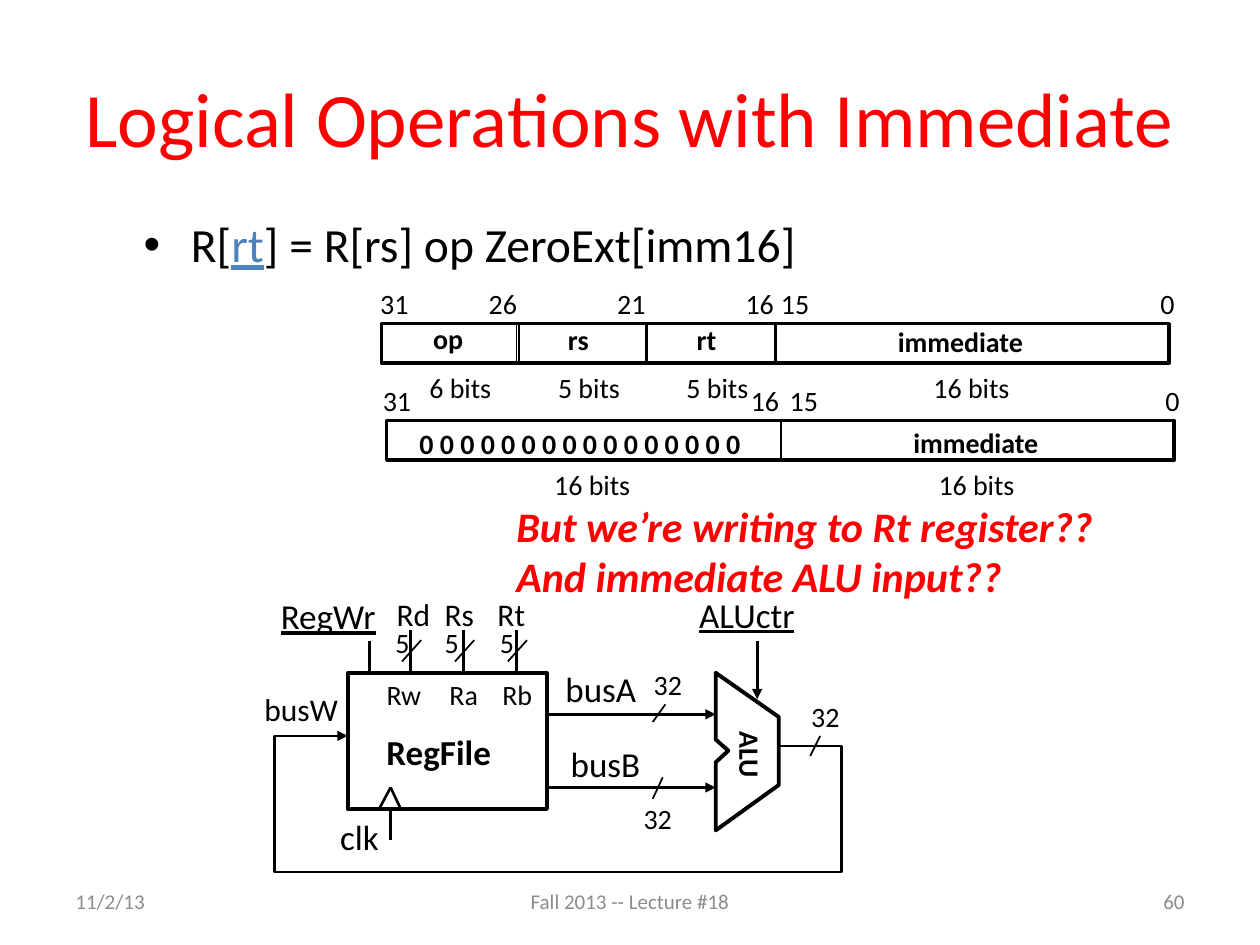
from pptx import Presentation
from pptx.dml.color import RGBColor
from pptx.enum.shapes import MSO_CONNECTOR, MSO_SHAPE
from pptx.enum.text import MSO_ANCHOR, PP_ALIGN
from pptx.oxml.ns import qn
from pptx.util import Pt
from lxml.etree import SubElement

THEME = {
    "font": "Calibri", "ink": "000000", "alert": "FF0000", "accent": "4F81BD", "muted": "8C8C8C",
    "title": 44, "body": 27.2, "callout": 24, "signal": 20, "port": 18, "label": 16, "footer": 12,
    "thin": 1, "wire": 1.5, "frame": 2, "block": 2.25,
}
LINE_HEIGHT = {THEME["label"]: 26.6, THEME["port"]: 29, THEME["signal"]: 31}

TITLE = "Logical Operations with Immediate"
RULE = [("R[", {}), ("rt", {"color": THEME["accent"], "underline": True}),
        ("] = R[rs] op ZeroExt[imm16]", {})]
CALLOUT = ["But we’re writing to Rt register??", "And immediate ALU input??"]
FOOTERS = [  # text, left, width, alignment
    ("11/2/13", 36, 168, PP_ALIGN.LEFT),
    ("Fall 2013 -- Lecture #18", 246, 228, PP_ALIGN.CENTER),
    ("60", 516, 168, PP_ALIGN.RIGHT),
]

# Instruction words: cells are (left, width); labels are (text, left, width)
WORDS = [
    {"left": 218, "top": 185,
     "cells": [(217.4, 77.8), (296.6, 72.7), (370, 72.7), (443.5, 224.6)],
     "names": [("op", 240.5, 31.7, 180.3), ("rs", 317.5, 26.6, 181), ("rt", 391, 26.6, 181),
               ("immediate", 506, 87, 182.2)],
     "positions": [("31", 210.2, 31), ("26", 272.2, 31), ("21", 345.6, 31), ("16", 419, 31),
                   ("15", 439.2, 31), ("0", 656, 22.3)],
     "sizes": [("6 bits", 238.3, 50.4), ("5 bits", 311.8, 50.4), ("5 bits", 385.2, 50.4),
               ("16 bits", 526.3, 58.3)]},
    {"left": 221, "top": 240.3,
     "cells": [(446.4, 225)],
     "names": [("0 0 0 0 0 0 0 0 0 0 0 0 0 0 0 0", 232.6, 202.3, 240.5),
               ("immediate", 514.8, 87, 239.8)],
     "positions": [("31", 211.7, 31), ("16", 422, 31), ("15", 444.2, 31), ("0", 658.8, 22.3)],
     "sizes": [("16 bits", 309.6, 58.3), ("16 bits", 529.2, 58.3)]},
]
WORD_WIDTH, WORD_HEIGHT = 450, 22.6

SIGNALS = [  # text, left, top, width, size, format
    ("RegWr", 153.4, 336.2, 69, "signal", {"underline": True}),
    ("ALUctr", 392.4, 335.5, 82, "signal", {"underline": True}),
    ("busA", 316, 378, 56.2, "signal", {}),
    ("busB", 319, 420.5, 55.4, "signal", {}),
    ("clk", 187.2, 462.2, 36.7, "signal", {}),
    ("RegFile", 213.8, 414, 75, "signal", {"bold": True}),
    ("busW", 144, 391, 57, "port", {}),
    ("Rd", 219.6, 336.2, 33.8, "port", {}),
    ("Rs", 247, 336.2, 31.7, "port", {}),
    ("Rt", 277.2, 336.2, 31, "port", {}),
    ("Rw", 213.8, 383.8, 34.6, "label", {}),
    ("Ra", 249.8, 383.8, 31.7, "label", {}),
    ("Rb", 280, 383.8, 33, "label", {}),
    ("5", 218.9, 354.2, 22.3, "label", {}),
    ("5", 247, 354.2, 22.3, "label", {}),
    ("5", 278.6, 354.2, 22.3, "label", {}),
    ("32", 366.5, 378, 31, "label", {}),
    ("32", 360.7, 454.3, 31, "label", {}),
    ("32", 456.5, 396, 31, "label", {}),
    ("ALU", 407.5, 419, 42.5, "label", {"bold": True, "rotation": 90}),
]
REGFILE = (198.7, 384.5, 113.8, 77.8)
ALU = [(409, 384.5), (409, 422.6), (416.2, 429), (409, 435.6), (409, 474.5),
       (445, 448.6), (445, 409.7)]
FEEDBACK = [(445, 426.2), (481, 426.2), (481, 498.2), (157, 498.2), (157, 420.5), (198.7, 420.5)]
PORT_XS = [234.7, 265, 295.2]
ARROWS = [(313, 408.2, 409, 408.2), (313, 450, 409, 450), (432.7, 366.5, 432.7, 399.6)]
WIRES = [(211, 366.5, 211, 384.5), (223.2, 450, 216.7, 462.2), (223.2, 450, 229, 462.2),
         (223.2, 462.2, 223.2, 480.2)] + [(x, 360, x, 384.5) for x in PORT_XS]
SLASHES = [(380.2, 402.5, 373, 412.6), (373, 456.5, 378.7, 444.2), (468.7, 420.5, 463, 432)]
SLASHES += [(x - 5, 378, x + 6, 365.8) for x in PORT_XS]

deck = Presentation()
deck.slide_width, deck.slide_height = Pt(720), Pt(540)
slide = deck.slides.add_slide(deck.slide_layouts[6])
shapes = slide.shapes


def add_text(paragraphs, left, top, width, height, *, size="label", color=THEME["ink"],
             bold=False, italic=False, underline=False, align=PP_ALIGN.LEFT,
             anchor=MSO_ANCHOR.TOP, wrap=False, rotation=0):
    """Add a text box; each paragraph is a string or a list of (text, overrides) runs."""
    box = shapes.add_textbox(Pt(left), Pt(top), Pt(width), Pt(height))
    box.rotation = rotation
    frame = box.text_frame
    frame.word_wrap, frame.vertical_anchor = wrap, anchor
    for index, content in enumerate(paragraphs):
        paragraph = frame.paragraphs[0] if index == 0 else frame.add_paragraph()
        paragraph.alignment = align
        for text, overrides in [(content, {})] if isinstance(content, str) else content:
            run = paragraph.add_run()
            run.text = text
            font = run.font
            font.name, font.size = THEME["font"], Pt(THEME[size])
            font.bold, font.italic = bold, italic
            font.underline = overrides.get("underline", underline)
            font.color.rgb = RGBColor.from_string(overrides.get("color", color))
    return box


def add_label(text, left, top, width, size="label", **text_format):
    add_text([text], left, top, width, LINE_HEIGHT[THEME[size]], size=size, **text_format)


def set_line(shape, weight, arrow=False):
    shape.line.color.rgb = RGBColor.from_string(THEME["ink"])
    shape.line.width = Pt(THEME[weight])
    if arrow:
        SubElement(shape.line._get_or_add_ln(), qn("a:tailEnd"), type="triangle")


def outline(shape, weight, arrow=False):
    shape.shadow.inherit = False
    shape.fill.background()
    set_line(shape, weight, arrow)


def add_box(left, top, width, height, weight):
    box = shapes.add_shape(MSO_SHAPE.RECTANGLE, Pt(left), Pt(top), Pt(width), Pt(height))
    outline(box, weight)


def add_path(points, weight, close=False, arrow=False):
    corners = [(Pt(x), Pt(y)) for x, y in points]
    builder = shapes.build_freeform(*corners[0])
    builder.add_line_segments(corners[1:], close=close)
    outline(builder.convert_to_shape(), weight, arrow)


def add_line(ends, weight, arrow=False):
    line = shapes.add_connector(MSO_CONNECTOR.STRAIGHT, *map(Pt, ends))
    set_line(line, weight, arrow)
    SubElement(line._element.spPr, qn("a:effectLst"))


def add_word(word):
    """Draw an instruction word with bit positions above and field sizes below."""
    top = word["top"]
    add_box(word["left"], top, WORD_WIDTH, WORD_HEIGHT, "frame")
    for left, width in word["cells"]:
        add_box(left, top, width, WORD_HEIGHT, "thin")
    for text, left, width, name_top in word["names"]:
        add_label(text, left, name_top, width, bold=True)
    for row, offset in (("positions", -24.7), ("sizes", 23.2)):
        for text, left, width in word[row]:
            add_label(text, left, top + offset, width)


add_text([TITLE], 36, 21.6, 648, 90, size="title", color=THEME["alert"],
         align=PP_ALIGN.CENTER, anchor=MSO_ANCHOR.MIDDLE, wrap=True)
rule = add_text([RULE], 75, 119.5, 645, 34.6, size="body", wrap=True)
rule_format = rule.text_frame.paragraphs[0]._p.get_or_add_pPr()
rule_format.set("marL", str(Pt(27)))
rule_format.set("indent", str(Pt(-27)))
SubElement(rule_format, qn("a:buFont"), typeface="Arial")
SubElement(rule_format, qn("a:buChar"), char="•")

for text, left, width, align in FOOTERS:
    add_text([text], left, 500.5, width, 28.8, size="footer", color=THEME["muted"],
             align=align, anchor=MSO_ANCHOR.MIDDLE, wrap=True)
for word in WORDS:
    add_word(word)

add_box(*REGFILE, "block")
add_path(ALU, "block", close=True)
add_path(FEEDBACK, "wire", arrow=True)
for ends in WIRES:
    add_line(ends, "wire")
for ends in ARROWS:
    add_line(ends, "wire", arrow=True)
for ends in SLASHES:
    add_line(ends, "thin")
for text, left, top, width, size, text_format in SIGNALS:
    add_label(text, left, top, width, size, **text_format)
add_text(CALLOUT, 288, 282.2, 352.8, 65.5, size="callout", color=THEME["alert"],
         bold=True, italic=True)

deck.save("out.pptx")
